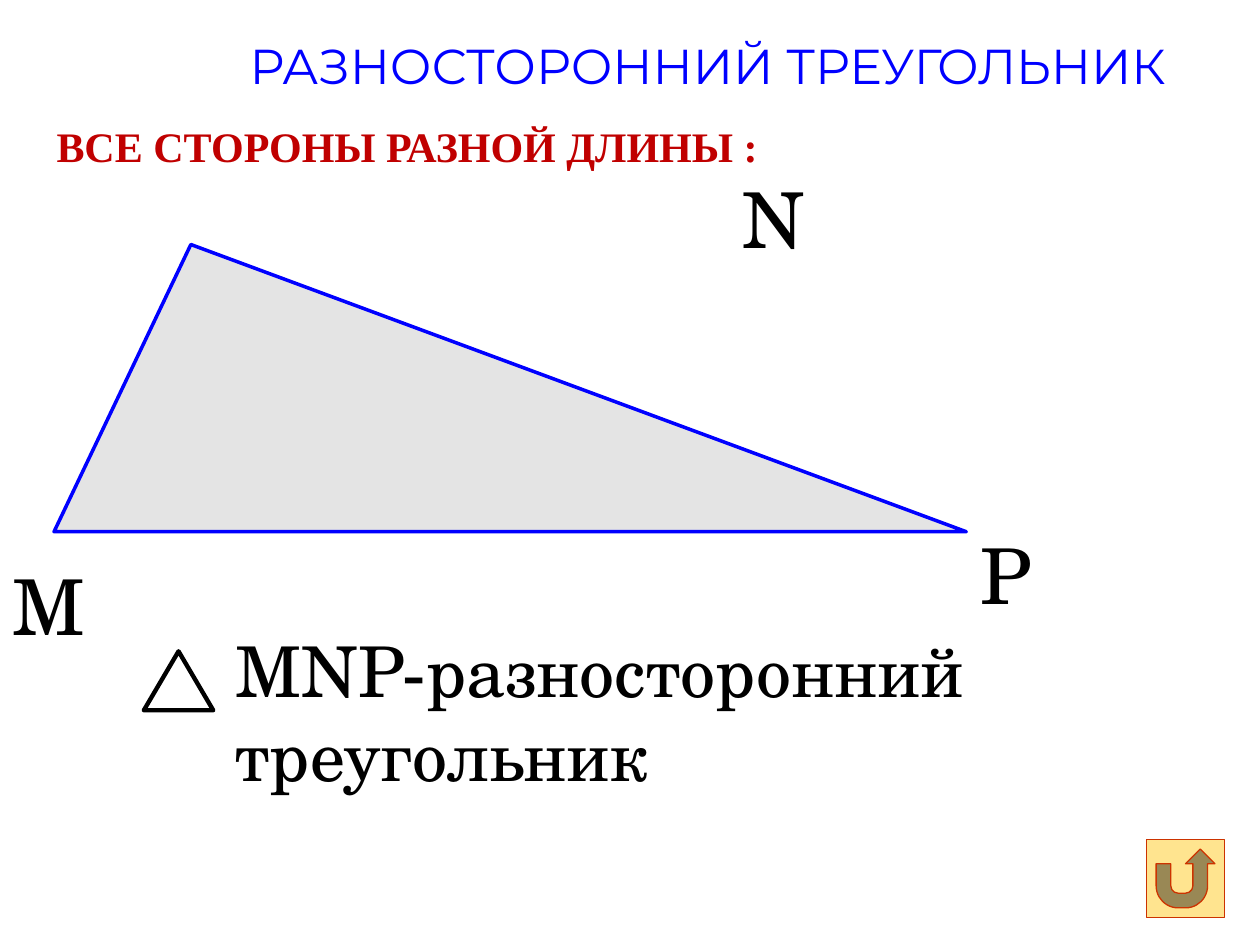
from dataclasses import dataclass

from lxml.etree import SubElement
from pptx import Presentation
from pptx.dml.color import RGBColor
from pptx.enum.shapes import MSO_SHAPE
from pptx.enum.text import MSO_ANCHOR, PP_ALIGN
from pptx.oxml.ns import qn
from pptx.util import Cm, Pt


@dataclass(frozen=True)
class Theme:
    blue: str = "0000FF"
    red: str = "C00000"
    black: str = "000000"
    gray: str = "BFBFBF"
    button_fill: str = "FFE48F"
    button_line: str = "CC3300"
    heading_font: str = "Montserrat"
    rule_font: str = "Times New Roman"
    body_font: str = "TeX Gyre Schola"
    heading_size: int = 28
    rule_size: int = 24
    label_size: int = 44
    body_size: int = 40
    gray_alpha: int = 42


THEME = Theme()


def write(sp, text, font, size, color, bold=False):
    tf = sp.text_frame
    tf.word_wrap = True
    tf.vertical_anchor = MSO_ANCHOR.TOP
    p = tf.paragraphs[0]
    p.alignment = PP_ALIGN.LEFT
    r = p.add_run()
    r.text = text
    for name, value in {"name": font, "size": Pt(size), "bold": bold}.items():
        setattr(r.font, name, value)
    r.font.color.rgb = RGBColor.from_string(color)


def add_text(s, box, *style, **options):
    sp = s.shapes.add_textbox(*map(Cm, box))
    write(sp, *style, **options)


def add_figure(s, kind, box, line, width, fill=None, alpha=None):
    sp = s.shapes.add_shape(kind, *map(Cm, box))
    sp.shadow.inherit = False
    sp.line.color.rgb = RGBColor.from_string(line)
    sp.line.width = Pt(width)
    if fill is None:
        sp.fill.background()
    else:
        sp.fill.solid()
        sp.fill.fore_color.rgb = RGBColor.from_string(fill)
    if alpha is not None:
        color = sp.fill._xPr.find(qn("a:solidFill"))[0]
        SubElement(color, qn("a:alpha")).set("val", str(alpha * 1000))
    return sp


def add_title(s, box):
    sp = s.shapes.title
    for name, value in zip(("left", "top", "width", "height"), box):
        setattr(sp, name, Cm(value))
    write(sp, "РАЗНОСТОРОННИЙ ТРЕУГОЛЬНИК", THEME.heading_font,
          THEME.heading_size, THEME.blue)


def add_rule(s, box):
    add_text(s, box, "ВСЕ СТОРОНЫ РАЗНОЙ ДЛИНЫ :", THEME.rule_font,
             THEME.rule_size, THEME.red, bold=True)


def add_labelled_triangle(s, box):
    x, y, w, h = box
    triangle = add_figure(s, MSO_SHAPE.ISOSCELES_TRIANGLE,
                          (x + 1.09, y + 1.6, w - 3.89, h - 4.14),
                          THEME.blue, 2, THEME.gray, THEME.gray_alpha)
    triangle.adjustments[0] = 0.15
    label_w, label_h = 2.77, 2.13
    labels = {"M": (0, h - label_h), "P": (w - label_w, 7.19), "N": (14.71, 0)}
    for text, (dx, dy) in labels.items():
        add_text(s, (x + dx, y + dy, label_w, label_h), text,
                 THEME.body_font, THEME.label_size, THEME.black)


def add_conclusion(s, box):
    x, y, w, h = box
    indent = 1.6
    add_figure(s, MSO_SHAPE.ISOSCELES_TRIANGLE, (x, y + 0.61, 1.4, 1.19),
               THEME.black, 2.5)
    add_text(s, (x + indent, y, w - indent, h),
             "MNP-разносторонний треугольник",
             THEME.body_font, THEME.body_size, THEME.black)


def add_return_button(s, box):
    add_figure(s, MSO_SHAPE.ACTION_BUTTON_RETURN, box,
               THEME.button_line, 0.75, THEME.button_fill)


def main():
    prs = Presentation()
    prs.slide_width, prs.slide_height = Cm(25.4), Cm(19.05)
    s = prs.slides.add_slide(prs.slide_layouts[5])
    add_labelled_triangle(s, (0, 3.33, 22.28, 9.93))
    add_title(s, (4.78, 0.58, 20.62, 1.45))
    add_rule(s, (0.89, 2.31, 15.88, 1.3))
    add_conclusion(s, (2.9, 12.52, 21.41, 3.68))
    add_return_button(s, (23.11, 16.92, 1.58, 1.58))
    prs.save("out.pptx")


if __name__ == "__main__":
    main()
